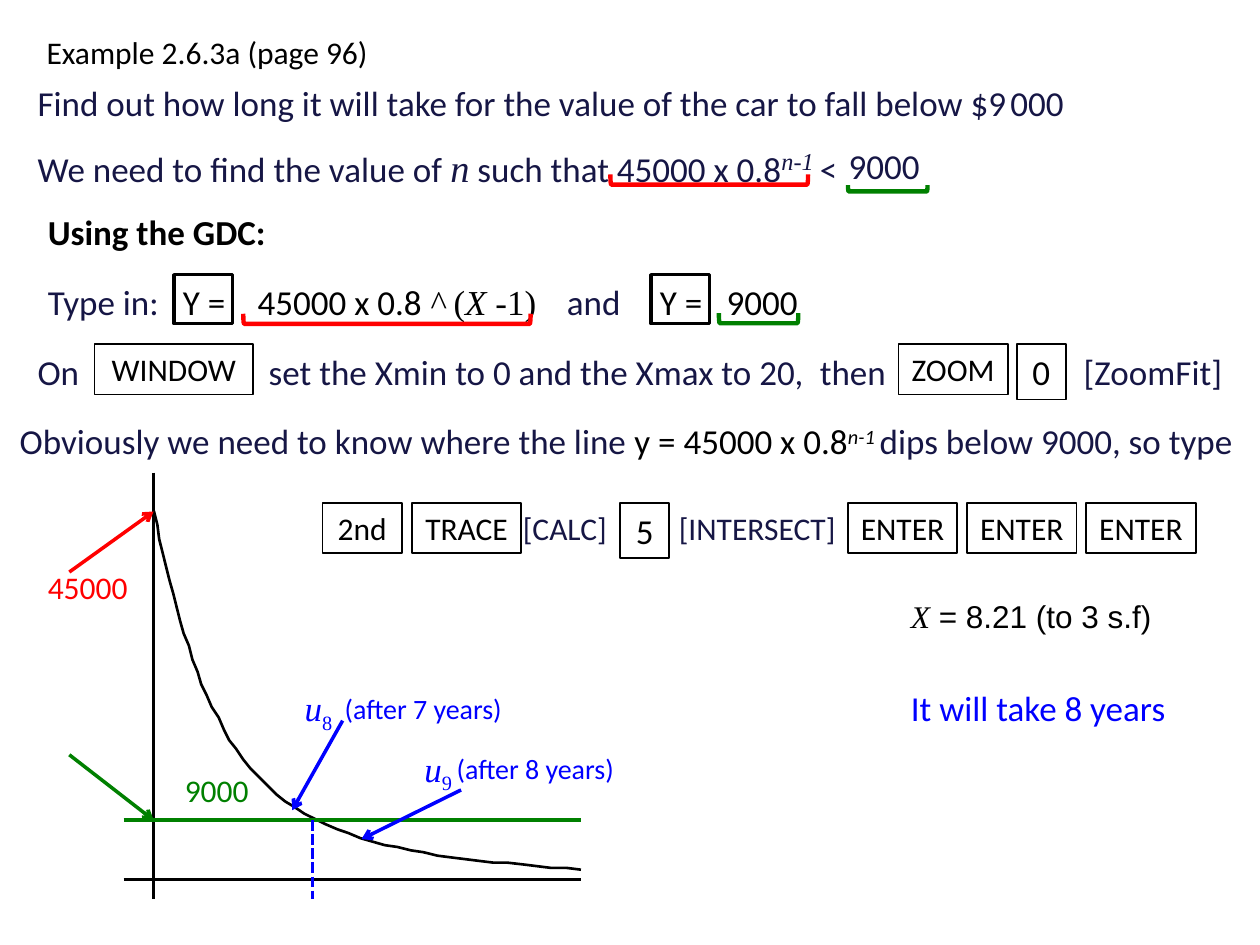
from lxml import etree
from pptx import Presentation
from pptx.dml.color import RGBColor
from pptx.enum import dml, shapes, text
from pptx.oxml.ns import qn
from pptx.util import Pt

NAVY = RGBColor(0x16, 0x16, 0x45)
BLACK = RGBColor(0, 0, 0)
RED = RGBColor(0xFF, 0, 0)
GREEN = RGBColor(0, 0x80, 0)
BLUE = RGBColor(0, 0, 0xFF)
WHITE = RGBColor(0xFF, 0xFF, 0xFF)
TIMES = "Times New Roman"


def add_span(para, words, size=20, font="Calibri", color=NAVY, bold=False,
             italic=False, baseline=0):
    """Append a run; baseline is a percentage, positive for superscript."""
    span = para.add_run()
    span.text = words
    span.font.size = Pt(size)
    span.font.name = font
    span.font.color.rgb = color
    span.font.bold = bold
    span.font.italic = italic
    if baseline:
        span.font._element.set("baseline", str(baseline * 1000))


def write(page, left, top, width, *spans, **style):
    """Place one line of text; each span is a string or a (string, changes) pair."""
    box = page.shapes.add_textbox(Pt(left), Pt(top), Pt(width), Pt(31.7))
    fill_line(box, *spans, **style)


def fill_line(box, *spans, **style):
    box.text_frame.word_wrap = True
    para = box.text_frame.paragraphs[0]
    for span in spans:
        words, changes = (span, {}) if isinstance(span, str) else span
        add_span(para, words, **{**style, **changes})


def add_outline(page, kind, left, top, width, height, color=BLACK, weight=2):
    shape = page.shapes.add_shape(kind, Pt(left), Pt(top), Pt(width), Pt(height))
    shape.shadow.inherit = False
    shape.fill.background()
    shape.line.color.rgb = color
    shape.line.width = Pt(weight)
    return shape


def add_key(page, left, top, width, label, size=18):
    """Draw a calculator key."""
    height = 28.8 if size == 18 else 31.7
    key = add_outline(page, shapes.MSO_SHAPE.RECTANGLE, left, top, width, height,
                      weight=1)
    frame = key.text_frame
    frame.margin_left = frame.margin_right = 0
    frame.vertical_anchor = text.MSO_ANCHOR.MIDDLE
    frame.paragraphs[0].alignment = text.PP_ALIGN.CENTER
    fill_line(key, label, size=size, color=BLACK)


def add_bracket(page, left, top, width, color, height=5.8):
    """Draw a bracket that opens upward, given its box as it appears."""
    shape = add_outline(page, shapes.MSO_SHAPE.LEFT_BRACKET,
                        left + (width - height) / 2, top + (height - width) / 2,
                        height, width, color, 2.5)
    shape.rotation = 270


def add_line(page, start, end, color=BLACK, weight=2, arrow=False, dashed=False):
    line = page.shapes.add_connector(shapes.MSO_CONNECTOR.STRAIGHT,
                                     *(Pt(value) for value in (*start, *end)))
    line.line.color.rgb = color
    line.line.width = Pt(weight)
    if dashed:
        line.line.dash_style = dml.MSO_LINE.SQUARE_DOT
    if arrow:
        etree.SubElement(line.line._get_or_add_ln(), qn("a:tailEnd"), type="arrow")
    etree.SubElement(line._element.spPr, qn("a:effectLst"))


def bezier(points, steps=24):
    """Return points along one cubic curve, without its start."""
    weights = (1, 3, 3, 1)
    return [tuple(sum(w * (1 - t) ** (3 - k) * t ** k * p[axis]
                      for k, (w, p) in enumerate(zip(weights, points)))
                  for axis in (0, 1))
            for t in (step / steps for step in range(1, steps + 1))]


def place_title(page, left, top):
    title = page.shapes.title
    title.left, title.top, title.width, title.height = (
        Pt(value) for value in (left, top, 260, 28.8))
    title.text_frame.vertical_anchor = text.MSO_ANCHOR.TOP
    title.text_frame.auto_size = text.MSO_AUTO_SIZE.NONE
    title.text_frame.paragraphs[0].alignment = text.PP_ALIGN.LEFT
    fill_line(title, "Example 2.6.3a (page 96)", size=18, color=BLACK)


def draw_question(page, left, top):
    write(page, left, top, 686,
          "Find out how long it will take for the value of the car to fall below $9",
          (" ", {"size": 8}), "000")
    write(page, left, top + 33.8, 480,
          "We need to find the value of ",
          ("n", {"size": 22, "font": TIMES, "italic": True}),
          " such that 45000 x 0.8",
          ("n-1 ", {"size": 24, "font": TIMES, "italic": True, "baseline": 30}), "<")
    write(page, left + 463.5, top + 36, 70, "9000")
    add_bracket(page, left + 334.4, top + 56.5, 113, RED)
    add_bracket(page, left + 470.2, top + 62.6, 45.4, GREEN, 3.6)


def draw_entry(page, left, top):
    """Heading and the two equations typed into the calculator."""
    write(page, left, top, 187, "Using the GDC:", bold=True, color=BLACK)
    row = top + 40.3
    write(page, left, row, 85, "Type in:")
    write(page, left + 296.6, row, 60, "and")
    for offset in (77.2, 349.8):
        write(page, left + offset, row, 55, "Y =", color=BLACK)
        add_outline(page, shapes.MSO_SHAPE.RECTANGLE, left + offset + 2, row, 33.5, 28)
    write(page, left + 120, row, 180, "45000 x 0.8 ",
          ("^ ", {"font": TIMES, "italic": True}), ("(", {"font": TIMES}),
          ("X ", {"font": TIMES, "italic": True}), ("-1)", {"font": TIMES}),
          color=BLACK)
    write(page, left + 388, row, 70, "9000", color=BLACK)
    add_bracket(page, left + 118.8, top + 62.6, 164.2, RED)
    add_bracket(page, left + 390.6, top + 62.2, 45.4, GREEN)


def draw_window_row(page, left, top):
    for offset, width, words in ((0, 50, "On"),
                                 (132.1, 330, "set the Xmin to 0 and the Xmax to 20,"),
                                 (447, 60, "then"), (597.8, 107, "[ZoomFit]")):
        write(page, left + offset, top, width, words)
    add_key(page, left + 39.6, top, 90.7, "WINDOW")
    add_key(page, left + 499, top, 62.6, "ZOOM")
    add_key(page, left + 566.6, top, 28.1, "0", 20)


def draw_intersect_row(page, left, top):
    add_key(page, left, top, 45.4, "2nd")
    add_key(page, left + 51.1, top, 62.6, "TRACE")
    write(page, left + 107.4, top, 80, "[CALC]", size=18)
    add_key(page, left + 170, top, 28.1, "5", 20)
    write(page, left + 196.5, top, 110, "[INTERSECT]", size=18)
    for index in range(3):
        add_key(page, left + 300.2 + index * 68.1, top, 62.6, "ENTER")


def draw_graph(page, left, top):
    def at(x, y):
        return left + x, top + y

    axis, floor, limit, right = 67.8, 232.6, 198.7, 311.9
    add_line(page, at(axis, 0), at(axis, 244), weight=1.5)
    add_line(page, at(50.6, floor), at(right, floor), weight=1.5)

    knots = [at(*knot) for knot in (
        (axis, 22.3), (82.2, 85.7), (96.6, 149), (137.7, 183.6),
        (178, 217.4), (245, 221.8), (right, 226.8))]
    builder = page.shapes.build_freeform(*knots[0], scale=Pt(1))
    builder.add_line_segments(bezier(knots[:4]) + bezier(knots[3:]), close=False)
    curve = builder.convert_to_shape()
    curve.shadow.inherit = False
    curve.fill.background()
    curve.line.color.rgb = BLACK
    curve.line.width = Pt(1.5)

    add_line(page, at(50.6, limit), at(right, limit), GREEN)
    add_line(page, at(158.6, limit), at(158.6, 244), BLUE, dashed=True)
    for start, end, color in (((19.6, 56.9), (axis, 22.3), RED),
                              ((19.6, 161.3), (axis, limit), GREEN),
                              ((175.8, 141.8), (147, 193), BLUE),
                              ((243.5, 181.4), (186.6, 209.5), BLUE)):
        add_line(page, at(*start), at(*end), color, arrow=True)

    write(page, *at(0.2, 51.1), 78.5, "45000", size=18, color=RED)
    write(page, *at(78.5, 167), 78.5, "9000", size=18, color=GREEN)
    for x, y, gap, term, years in ((147, 118.8, 22.9, "8", "(after 7 years)"),
                                   (215.4, 153.4, 18.5, "9", "(after 8 years)")):
        write(page, *at(x, y), 45, ("u", {"italic": True}), (term, {"baseline": -25}),
              font=TIMES, color=BLUE)
        write(page, *at(x + gap, y + 2.6), 120, years, size=16, color=BLUE)


def draw_answer(page, left, top):
    write(page, left, top, 170, ("X", {"font": TIMES, "italic": True}),
          " = 8.21 (to 3 s.f)", size=18, font="Arial", color=BLACK)
    write(page, left, top + 51.1, 170, "It will take 8 years", color=BLUE)


def main():
    deck = Presentation()
    deck.slide_width, deck.slide_height = Pt(720), Pt(540)
    page = deck.slides.add_slide(deck.slide_layouts[5])
    page.background.fill.solid()
    page.background.fill.fore_color.rgb = WHITE
    place_title(page, 19.4, 15.1)
    draw_question(page, 14.4, 43.2)
    draw_entry(page, 20.2, 116.7)
    draw_window_row(page, 14.4, 196.6)
    write(page, 4.2, 236.2, 715.8, "Obviously we need to know where the line ",
          ("y = 45000 x 0.8", {"color": BLACK}),
          ("n-1 ", {"color": BLACK, "italic": True, "baseline": 30}),
          "dips below 9000, so type")
    draw_intersect_row(page, 184.3, 287.3)
    draw_graph(page, 20, 270)
    draw_answer(page, 513.4, 337.7)
    deck.save("out.pptx")


if __name__ == "__main__":
    main()
